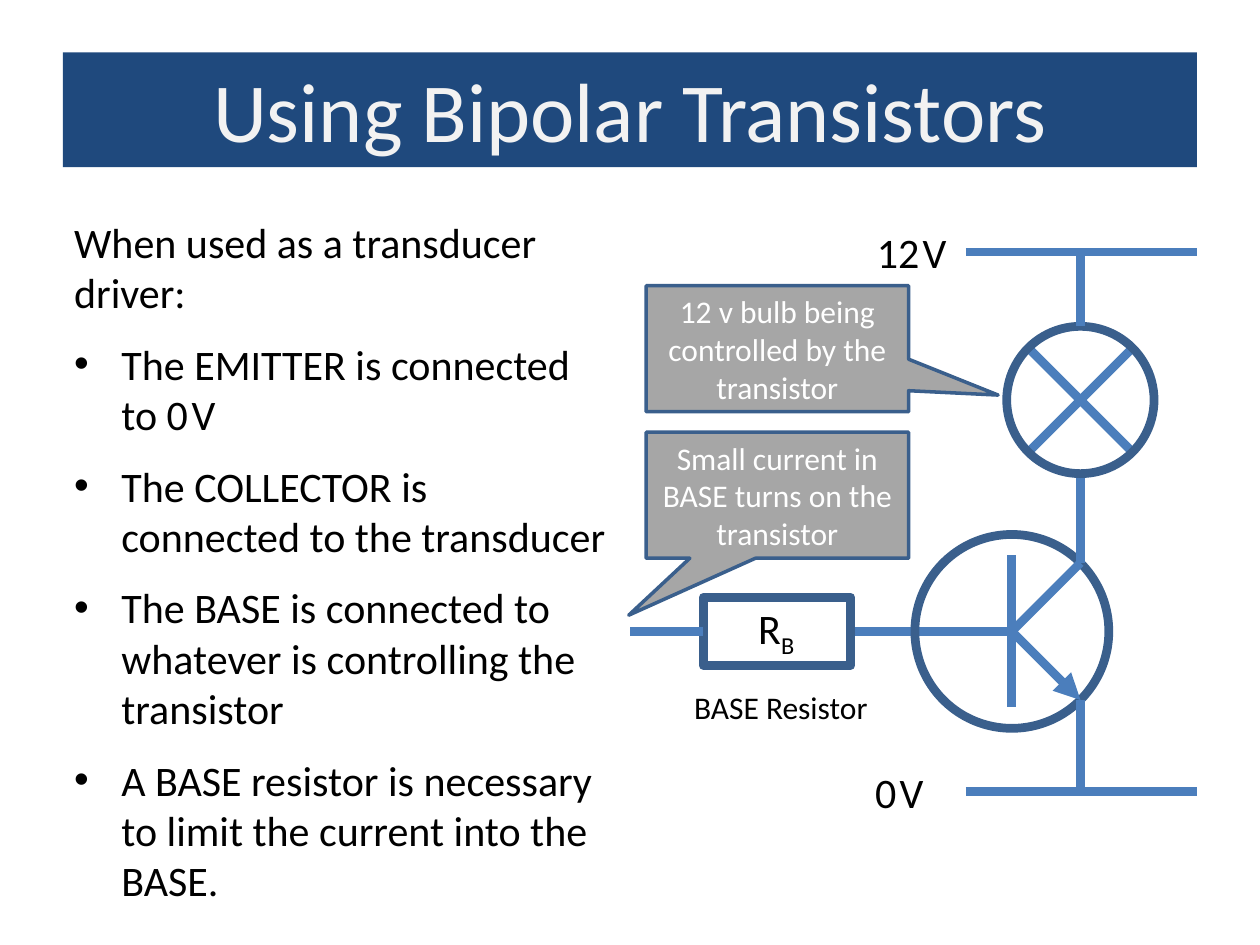
"""Build a slide on driving a lamp with a bipolar transistor."""
from lxml import etree
from pptx import Presentation
from pptx.dml.color import RGBColor
from pptx.enum.shapes import MSO_CONNECTOR, MSO_SHAPE
from pptx.enum.text import MSO_ANCHOR, PP_ALIGN
from pptx.oxml.ns import qn
from pptx.util import Pt

RECTANGLE = MSO_SHAPE.RECTANGLE
OVAL = MSO_SHAPE.OVAL
CALLOUT = MSO_SHAPE.RECTANGULAR_CALLOUT
STRAIGHT = MSO_CONNECTOR.STRAIGHT
CENTER, LEFT = PP_ALIGN.CENTER, PP_ALIGN.LEFT
MIDDLE, TOP = MSO_ANCHOR.MIDDLE, MSO_ANCHOR.TOP


def color(value):
    return RGBColor.from_string(value)


class SlideBuilder:
    """Hold the style and the current slide, and draw its elements."""

    font = "Calibri"
    wire_color = "4B7EBC"
    outline_color = "3A5F8C"
    stroke = 5

    def __init__(self, slide):
        self.slide = slide

    def fill_paragraph(self, paragraph, runs, size, text_color, align=LEFT):
        paragraph.alignment = align
        paragraph.font.name = self.font
        paragraph.font.size = Pt(size)
        paragraph.font.color.rgb = color(text_color)
        for text, run_size, baseline in runs:
            run = paragraph.add_run()
            run.text = text
            run.font.name = self.font
            run.font.size = Pt(run_size or size)
            run.font.color.rgb = color(text_color)
            if baseline:
                run._r.get_or_add_rPr().set("baseline", str(baseline))

    def shape(self, kind, left, top, width, height, fill=None, line=None, line_width=stroke):
        shape = self.slide.shapes.add_shape(kind, Pt(left), Pt(top), Pt(width), Pt(height))
        shape.shadow.inherit = False
        if fill:
            shape.fill.solid()
            shape.fill.fore_color.rgb = color(fill)
        else:
            shape.fill.background()
        if line:
            shape.line.color.rgb = color(line)
            shape.line.width = Pt(line_width)
        else:
            shape.line.fill.background()
        return shape

    def circle(self, x, y, radius):
        self.shape(OVAL, x - radius, y - radius, 2 * radius, 2 * radius, line=self.outline_color)

    def title(self, text, left, top, width, height):
        shape = self.shape(RECTANGLE, left, top, width, height, fill="1F497D")
        shape.text_frame.vertical_anchor = TOP
        self.fill_paragraph(shape.text_frame.paragraphs[0], [(text, None, 0)], 48, "F2F2F2", CENTER)

    def callout(self, text, left, top, tip):
        shape = self.shape(CALLOUT, left, top, 150, 72, "A6A6A6", self.outline_color, 2)
        shape.adjustments[0], shape.adjustments[1] = tip
        shape.text_frame.word_wrap = True
        shape.text_frame.vertical_anchor = MIDDLE
        self.fill_paragraph(shape.text_frame.paragraphs[0], [(text, None, 0)], 18, "FFFFFF", CENTER)

    def wire(self, x1, y1, x2, y2, arrow=False):
        connector = self.slide.shapes.add_connector(STRAIGHT, Pt(x1), Pt(y1), Pt(x2), Pt(y2))
        connector.line.color.rgb = color(self.wire_color)
        connector.line.width = Pt(self.stroke)
        if arrow:
            etree.SubElement(connector.line._get_or_add_ln(), qn("a:tailEnd"), type="triangle")
        etree.SubElement(connector._element.spPr, qn("a:effectLst"))

    def text_frame(self, left, top, width, height, wrap):
        box = self.slide.shapes.add_textbox(Pt(left), Pt(top), Pt(width), Pt(height))
        box.text_frame.word_wrap = wrap
        return box.text_frame

    def label(self, runs, left, top, width, height=36, size=24):
        frame = self.text_frame(left, top, width, height, False)
        self.fill_paragraph(frame.paragraphs[0], runs, size, "000000")

    def bullets(self, intro, items, left, top, width, height):
        frame = self.text_frame(left, top, width, height, True)
        for index, runs in enumerate([intro, *items]):
            paragraph = frame.add_paragraph() if index else frame.paragraphs[0]
            self.fill_paragraph(paragraph, runs, 24, "000000")
            paragraph.space_after = Pt(12)
            if index:
                properties = paragraph._p.get_or_add_pPr()
                properties.set("marL", str(Pt(27)))
                properties.set("indent", str(Pt(-27)))
                etree.SubElement(properties, qn("a:buFont"), typeface="Arial")
                etree.SubElement(properties, qn("a:buChar"), char="•")
                properties.append(properties.find(qn("a:defRPr")))


def main():
    presentation = Presentation()
    presentation.slide_width, presentation.slide_height = Pt(720), Pt(540)
    builder = SlideBuilder(presentation.slides.add_slide(presentation.slide_layouts[6]))

    builder.title("Using Bipolar Transistors", 36, 30, 648, 65.5)
    builder.bullets(
        [("When used as a transducer driver:", None, 0)],
        [
            [("The EMITTER is connected to 0", None, 0), (" ", 9, 0), ("V", None, 0)],
            [("The COLLECTOR is connected to the transducer", None, 0)],
            [("The BASE is connected to whatever is controlling the transistor", None, 0)],
            [("A BASE resistor is necessary to limit the current into the BASE.", None, 0)],
        ],
        35.3, 120.2, 321, 386.6)

    base_x, base_y, lead = 578.2, 360.8, 39.2
    output_x = base_x + lead
    supply_y, ground_y = 144, 452.2
    lamp_y, lamp_radius, cross = 228.6, 42.1, 29.8
    resistor_left, resistor_width, resistor_height = 401.8, 84.4, 38.9

    for side in (-1, 1):
        builder.wire(output_x - cross, lamp_y + side * cross, output_x + cross, lamp_y - side * cross)
    builder.wire(base_x, base_y - 43.5, base_x, base_y + 43.5)
    builder.wire(resistor_left + resistor_width, base_y, base_x, base_y)
    builder.circle(base_x, base_y, 55.4)
    builder.wire(base_x, base_y, output_x, base_y - lead)
    builder.wire(base_x, base_y, output_x, base_y + lead, arrow=True)
    builder.wire(output_x, base_y - lead, output_x, lamp_y + lamp_radius)
    builder.wire(output_x, base_y + lead, output_x, ground_y)
    builder.circle(output_x, lamp_y, lamp_radius)
    builder.wire(output_x, lamp_y - lamp_radius, output_x, supply_y)
    for rail_y in (supply_y, ground_y):
        builder.wire(552, rail_y, 684, rail_y)
    builder.shape(RECTANGLE, resistor_left, base_y - resistor_height / 2, resistor_width,
                  resistor_height, line=builder.outline_color)
    builder.wire(resistor_left, base_y, 360, base_y)

    builder.label([("12", None, 0), (" ", 8, 0), ("V", None, 0)], 494, 126, 54.7)
    builder.label([("0", None, 0), (" ", 8, 0), ("V", None, 0)], 493, 434.2, 42.5)
    builder.label([("R", None, 0), ("B", None, -25000)], 426.2, 340.6, 36.7)
    builder.label([("BASE Resistor", None, 0)], 389.5, 389.5, 114.5, 29, 18)
    builder.callout("12 v bulb being controlled by the transistor", 369.2, 163.3, (0.841, 0.368))
    builder.callout("Small current in BASE turns on the transistor", 369.2, 247, (-0.566, 0.952))

    presentation.save("out.pptx")


if __name__ == "__main__":
    main()
